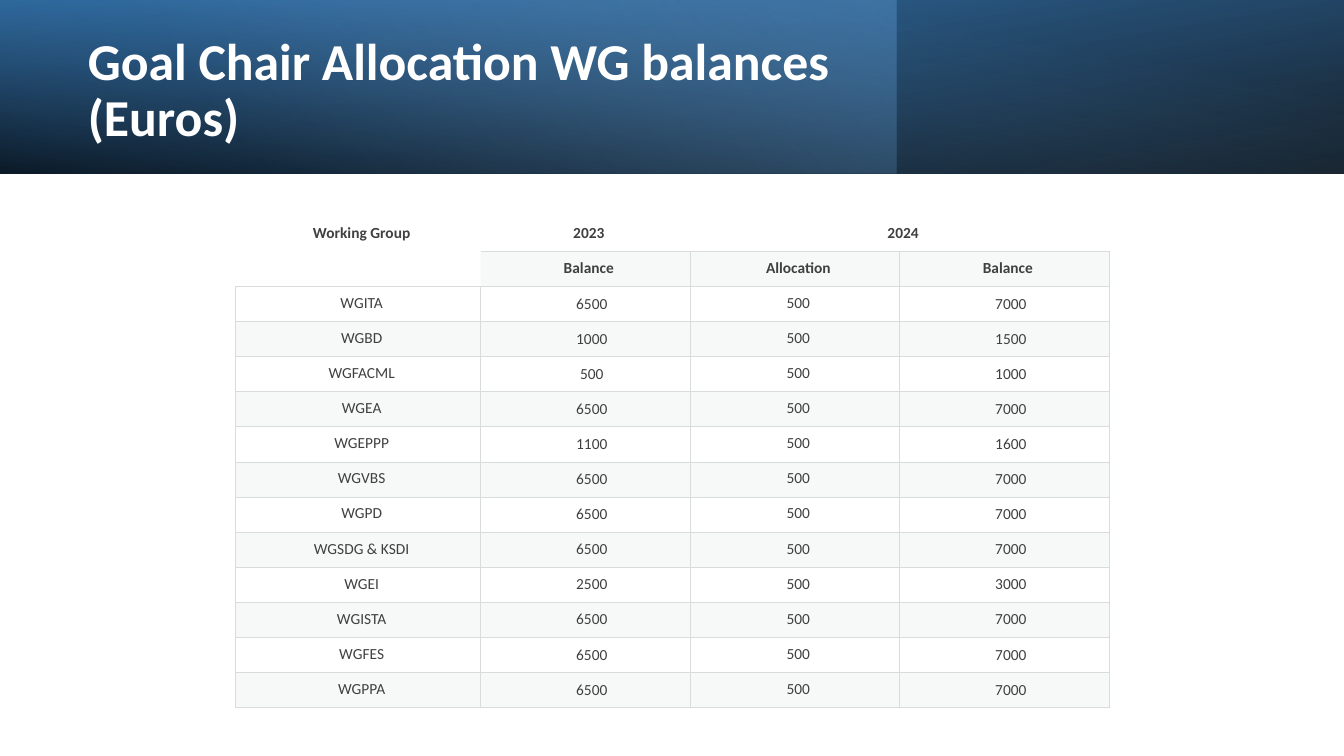
import pptx
import pptx.util
import pptx.dml.color
import pptx.enum.shapes
import pptx.enum.text
import pptx.oxml.ns
from lxml import etree

Cm, Pt = pptx.util.Cm, pptx.util.Pt
RGBColor = pptx.dml.color.RGBColor
qn = pptx.oxml.ns.qn

BLACK = RGBColor(0x00, 0x00, 0x00)
WHITE = RGBColor(0xFF, 0xFF, 0xFF)
DEEP_BLUE = RGBColor(0x2E, 0x75, 0xB6)
MID_BLUE = RGBColor(0x5B, 0x9B, 0xD5)
PALE_BLUE = RGBColor(0x9D, 0xC3, 0xE6)
TEXT_GREY = RGBColor(0x40, 0x40, 0x40)
BAND_GREY = RGBColor(0xD8, 0xDE, 0xDC)
GRID_GREY = RGBColor(0xD8, 0xDC, 0xDC)

FONT = "Calibri"
TITLE = "Goal Chair Allocation WG balances (Euros)"
HEADINGS = [
    ("Working Group", "2023", "2024", ""),
    ("", "Balance", "Allocation", "Balance"),
]
ALLOCATION = 500
BALANCES_2023 = {
    "WGITA": 6500,
    "WGBD": 1000,
    "WGFACML": 500,
    "WGEA": 6500,
    "WGEPPP": 1100,
    "WGVBS": 6500,
    "WGPD": 6500,
    "WGSDG & KSDI": 6500,
    "WGEI": 2500,
    "WGISTA": 6500,
    "WGFES": 6500,
    "WGPPA": 6500,
}
BANNER_LAYERS = [
    (33.87, 180, True, 100, [(0, BLACK, 96), (100, DEEP_BLUE, 100)]),
    (22.58, 0, False, 140, [(0, MID_BLUE, 41), (74, PALE_BLUE, 0)]),
    (33.87, 0, True, 260, [(0, BLACK, 63), (78, MID_BLUE, 15)]),
]
BANNER_HEIGHT = Cm(4.38)
COLUMN_WIDTHS = [Cm(6.17), Cm(5.28), Cm(5.28), Cm(5.28)]
TABLE_HEIGHT = Cm(12.37)
PLAIN_TABLE_STYLE = "{2D5ABB26-0587-4C30-8999-92F81FD0307C}"


def add_color(parent, color, opacity):
    srgb = etree.SubElement(parent, qn("a:srgbClr"), val=str(color))
    if opacity < 100:
        etree.SubElement(srgb, qn("a:alpha"), val=str(opacity * 1000))


def add_banner_layer(slide, width, rotation, flipped, angle, stops):
    layer = slide.shapes.add_shape(
        pptx.enum.shapes.MSO_SHAPE.RECTANGLE, 0, 0, Cm(width), BANNER_HEIGHT)
    layer.shadow.inherit = False
    layer.line.fill.background()
    layer.rotation = rotation
    properties = layer._element.spPr
    if flipped:
        properties.find(qn("a:xfrm")).set("flipH", "1")
    gradient = etree.Element(qn("a:gradFill"), rotWithShape="1")
    stop_list = etree.SubElement(gradient, qn("a:gsLst"))
    for position, color, opacity in stops:
        stop = etree.SubElement(stop_list, qn("a:gs"), pos=str(position * 1000))
        add_color(stop, color, opacity)
    etree.SubElement(gradient, qn("a:lin"), ang=str(angle * 60000), scaled="0")
    properties.find(qn("a:prstGeom")).addnext(gradient)


def set_borders(cell, edges):
    properties = cell._tc.get_or_add_tcPr()
    for index, edge in enumerate(edges):
        line = etree.Element(qn("a:ln" + edge), w=str(Pt(0.75)))
        add_color(etree.SubElement(line, qn("a:solidFill")), GRID_GREY, 100)
        properties.insert(index, line)


def set_band(cell, shaded):
    if not shaded:
        cell.fill.background()
        return
    cell.fill.solid()
    cell.fill.fore_color.rgb = BAND_GREY
    srgb = next(cell._tc.tcPr.iter(qn("a:srgbClr")))
    etree.SubElement(srgb, qn("a:alpha"), val="20000")


def edges_for(row, column):
    if row == 0:
        return "B" if column else ""
    if row == 1:
        return ["", "RTB", "LRTB", "LRTB"][column]
    return "LRTB"


def fill_cell(cell, text, row, column):
    is_heading = row < len(HEADINGS)
    is_balance = not is_heading and column in (1, 3)
    cell.text_frame.text = text
    cell.margin_left = Cm(0.36)
    cell.margin_top = cell.margin_bottom = Cm(0.18)
    cell.margin_right = Cm(0.03 if is_balance else 0.18)
    anchors = pptx.enum.text.MSO_ANCHOR
    cell.vertical_anchor = anchors.MIDDLE if is_balance else anchors.TOP
    paragraph = cell.text_frame.paragraphs[0]
    paragraph.alignment = pptx.enum.text.PP_ALIGN.CENTER
    paragraph.font.size = Pt(11)
    for run in paragraph.runs:
        run.font.name = FONT
        run.font.size = Pt(11)
        run.font.bold = is_heading
        run.font.color.rgb = TEXT_GREY
    set_band(cell, row % 2 == 1 and not (is_heading and column == 0))
    set_borders(cell, edges_for(row, column))


def add_balances(slide):
    rows = HEADINGS + [
        (group, str(balance), str(ALLOCATION), str(balance + ALLOCATION))
        for group, balance in BALANCES_2023.items()
    ]
    frame = slide.shapes.add_table(
        len(rows), len(COLUMN_WIDTHS), Cm(5.94), Cm(5.46),
        sum(COLUMN_WIDTHS), TABLE_HEIGHT)
    balances = frame.table
    balances.first_row = balances.horz_banding = False
    balances._tbl.tblPr.find(qn("a:tableStyleId")).text = PLAIN_TABLE_STYLE
    for column, width in zip(balances.columns, COLUMN_WIDTHS):
        column.width = width
    for row, texts in enumerate(rows):
        balances.rows[row].height = TABLE_HEIGHT // len(rows)
        for column, text in enumerate(texts):
            fill_cell(balances.cell(row, column), text, row, column)
    balances.cell(0, 0).merge(balances.cell(1, 0))
    balances.cell(0, 2).merge(balances.cell(0, 3))


def set_title(slide):
    title = slide.shapes.title
    title.left, title.top = Cm(1.96), Cm(0.69)
    title.width, title.height = Cm(19.6), Cm(3.23)
    title.text_frame.text = TITLE
    title.text_frame.word_wrap = True
    title.text_frame.auto_size = pptx.enum.text.MSO_AUTO_SIZE.NONE
    title.text_frame.vertical_anchor = pptx.enum.text.MSO_ANCHOR.MIDDLE
    paragraph = title.text_frame.paragraphs[0]
    paragraph.alignment = pptx.enum.text.PP_ALIGN.LEFT
    paragraph.line_spacing = 0.9
    font = paragraph.runs[0].font
    font.name, font.size, font.bold = FONT, Pt(37), True
    font.color.rgb = WHITE
    slide.shapes._spTree.append(title._element)


def main():
    deck = pptx.Presentation()
    deck.slide_width, deck.slide_height = Cm(33.87), Cm(19.05)
    slide = deck.slides.add_slide(deck.slide_layouts[5])
    for layer in BANNER_LAYERS:
        add_banner_layer(slide, *layer)
    set_title(slide)
    add_balances(slide)
    deck.save("out.pptx")


if __name__ == "__main__":
    main()
